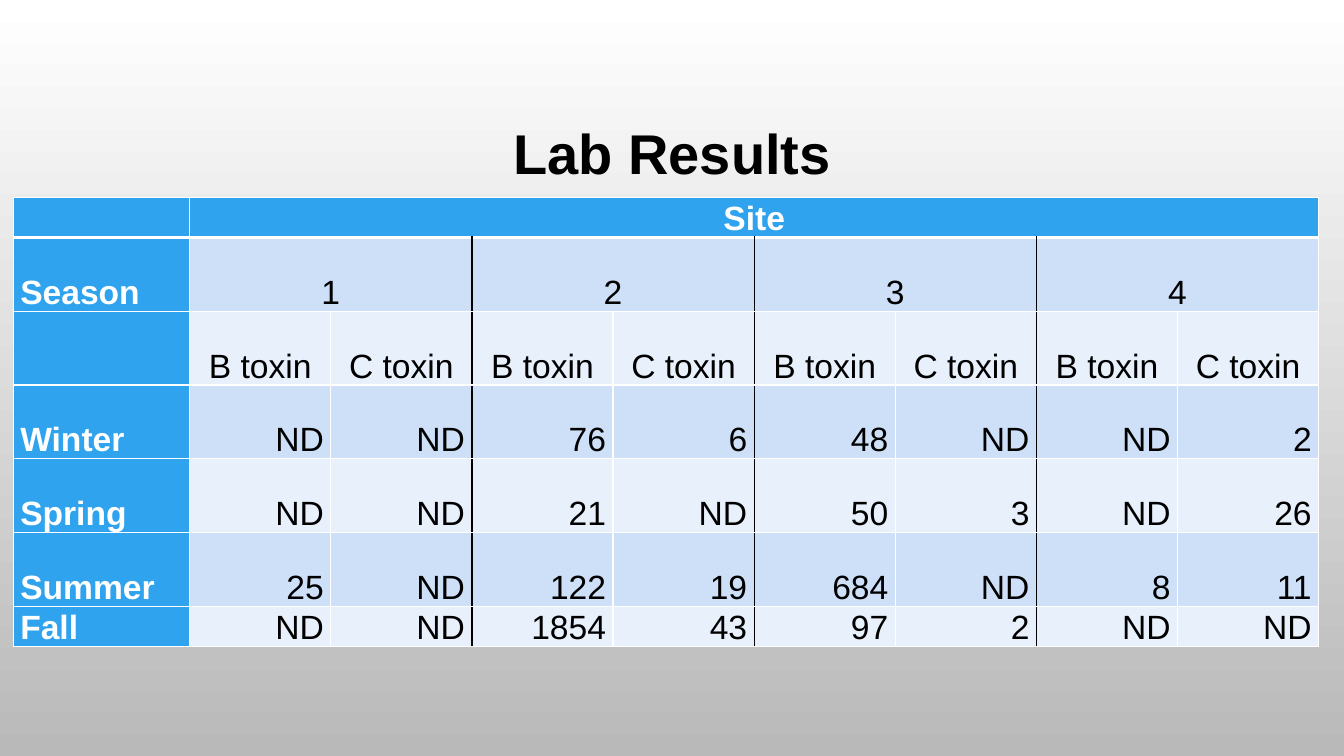
from lxml import etree
from pptx import Presentation
from pptx.dml.color import RGBColor
from pptx.enum.text import MSO_ANCHOR, PP_ALIGN
from pptx.oxml.ns import qn
from pptx.util import Pt

LEFT, CENTER, RIGHT = PP_ALIGN.LEFT, PP_ALIGN.CENTER, PP_ALIGN.RIGHT
MIDDLE, BOTTOM = MSO_ANCHOR.MIDDLE, MSO_ANCHOR.BOTTOM

WHITE = RGBColor(0xFF, 0xFF, 0xFF)
BLACK = RGBColor(0x00, 0x00, 0x00)
GREY = RGBColor(0xB9, 0xB9, 0xB9)
BLUE = RGBColor(0x2F, 0xA3, 0xEE)
BAND_DARK = RGBColor(0xCD, 0xE0, 0xF8)
BAND_LIGHT = RGBColor(0xE8, 0xF0, 0xFC)

SITES = ["1", "2", "3", "4"]
TOXINS = ["B toxin", "C toxin"]
RESULTS = [
    ["Winter", "ND", "ND", "76", "6", "48", "ND", "ND", "2"],
    ["Spring", "ND", "ND", "21", "ND", "50", "3", "ND", "26"],
    ["Summer", "25", "ND", "122", "19", "684", "ND", "8", "11"],
    ["Fall", "ND", "ND", "1854", "43", "97", "2", "ND", "ND"],
]
SPAN = len(TOXINS)
N_COLS = 1 + SPAN * len(SITES)
ROWS = [
    ["", "Site"] + [""] * (N_COLS - 2),
    ["Season"] + [t for site in SITES for t in [site] + [""] * (SPAN - 1)],
    [""] + TOXINS * len(SITES),
] + RESULTS
FIRST_DATA_ROW = len(ROWS) - len(RESULTS)

SEASON_W, VALUE_W = 126, 100.8
SHORT_H, TALL_H = 25.2, 52.7


def write(tf, text, size=24, color=BLACK, bold=False, align=LEFT, spacing=1.07):
    p = tf.paragraphs[0]
    p.alignment = align
    p.line_spacing = spacing
    r = p.add_run()
    r.text = text
    r.font.name = "Arial"
    r.font.size = Pt(size)
    r.font.bold = bold
    r.font.color.rgb = color


def set_borders(cell, **sides):
    """Draw the sides L, R, T and B, each given as (colour, width in points)."""
    tc_pr = cell._tc.get_or_add_tcPr()
    for side in "LRTB":
        color, width = sides[side]
        ln = etree.SubElement(tc_pr, qn("a:ln" + side), w=str(Pt(width)))
        fill = etree.SubElement(ln, qn("a:solidFill"))
        etree.SubElement(fill, qn("a:srgbClr"), val=str(color))


def divider(row, edge):
    """Colour of the vertical line left of column number edge."""
    between_sites = edge % SPAN == 1 and 1 < edge < N_COLS
    return BLACK if row > 0 and between_sites else WHITE


def format_cell(cell, row, col, text):
    last = col + (cell.span_width if cell.is_merge_origin else 1)
    set_borders(cell, L=(divider(row, col), 1), R=(divider(row, last), 1),
                T=(WHITE, 1), B=(WHITE, 1 if row else 3))
    heading = row == 0 or col == 0
    cell.fill.solid()
    cell.fill.fore_color.rgb = BLUE if heading else BAND_DARK if row % 2 else BAND_LIGHT
    cell.vertical_anchor = BOTTOM
    cell.margin_left = cell.margin_right = Pt(5)
    cell.margin_top = cell.margin_bottom = 0
    if text:
        align = LEFT if col == 0 else CENTER if row < FIRST_DATA_ROW else RIGHT
        write(cell.text_frame, text, color=WHITE if heading else BLACK,
              bold=heading, align=align)


def add_results_table(s, x, y):
    widths = [SEASON_W] + [VALUE_W] * (N_COLS - 1)
    heights = [SHORT_H] + [TALL_H] * (len(ROWS) - 2) + [SHORT_H]
    table = s.shapes.add_table(len(ROWS), N_COLS, Pt(x), Pt(y),
                               Pt(sum(widths)), Pt(sum(heights))).table
    for column, width in zip(table.columns, widths):
        column.width = Pt(width)
    for table_row, height in zip(table.rows, heights):
        table_row.height = Pt(height)
    table.cell(0, 1).merge(table.cell(0, N_COLS - 1))
    for col in range(1, N_COLS, SPAN):
        table.cell(1, col).merge(table.cell(1, col + SPAN - 1))
    for row, texts in enumerate(ROWS):
        for col, text in enumerate(texts):
            format_cell(table.cell(row, col), row, col, text)


def place_title(s, text, x, y, w, h):
    title = s.shapes.title
    title.left, title.top, title.width, title.height = Pt(x), Pt(y), Pt(w), Pt(h)
    title.text_frame.vertical_anchor = MIDDLE
    write(title.text_frame, text, size=40, bold=True, align=CENTER, spacing=0.9)
    title.element.getparent().append(title.element)  # bring to front


def paint_background(s):
    fill = s.background.fill
    fill.gradient()
    fill.gradient_angle = 270
    for stop, color in zip(fill.gradient_stops, (WHITE, GREY)):
        stop.color.rgb = color


def main():
    prs = Presentation()
    prs.slide_width, prs.slide_height = Pt(960), Pt(540)
    s = prs.slides.add_slide(prs.slide_layouts[5])
    paint_background(s)
    add_results_table(s, 9.5, 141)
    place_title(s, "Lab Results", 72, 49, 816, 126)
    prs.save("out.pptx")


if __name__ == "__main__":
    main()
